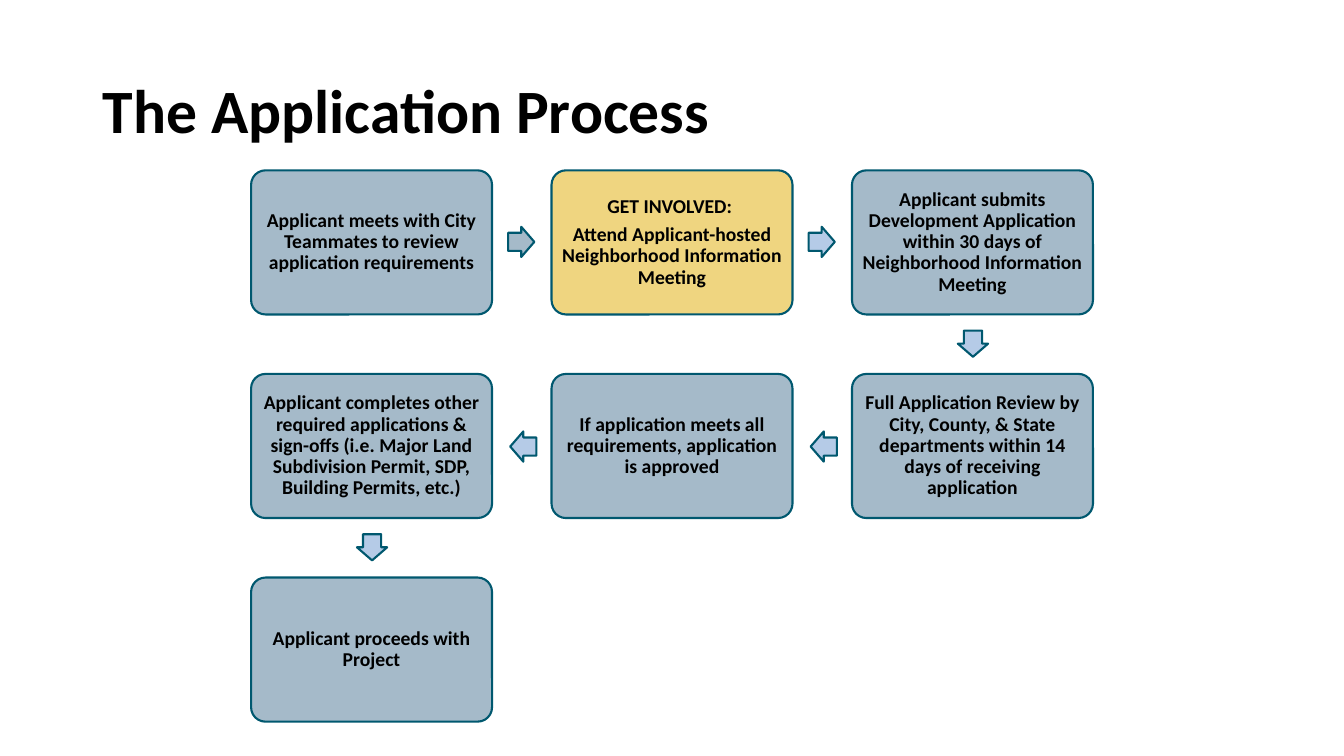
from pptx import Presentation
from pptx.dml.color import RGBColor
from pptx.enum.shapes import MSO_SHAPE
from pptx.enum.text import MSO_ANCHOR, PP_ALIGN
from pptx.util import Inches, Pt

COLORS = {"step": "A5BAC9", "highlight": "EFD580", "arrow": "B5CBE7",
          "outline": "00586F", "text": "000000"}

BOX_W, BOX_H = 2.39, 1.43
ARROW_W, ARROW_H = 0.26, 0.3
LEFT, TOP = 2.49, 1.69
COL_STEP, ROW_STEP = 2.98, 2.02

# Arrow offset from its step's corner, and rotation
ARROWS = {"right": (2.55, 0.56, 0),
          "down": (1.07, 1.57, 90),
          "left": (-0.41, 0.57, 180)}

# Column, row, box colour, paragraphs, direction of next step, arrow colour
STEPS = [
    (0, 0, "step", ["Applicant meets with City Teammates to review application requirements"],
     "right", "step"),
    (1, 0, "highlight", ["GET INVOLVED: ",
                         "Attend Applicant-hosted Neighborhood Information Meeting"],
     "right", "arrow"),
    (2, 0, "step", ["Applicant submits Development Application within 30 days of "
                    "Neighborhood Information Meeting"], "down", "arrow"),
    (2, 1, "step", ["Full Application Review by City, County, & State departments "
                    "within 14 days of receiving application"], "left", "arrow"),
    (1, 1, "step", ["If application meets all requirements, application is approved"],
     "left", "arrow"),
    (0, 1, "step", ["Applicant completes other required applications & sign-offs "
                    "(i.e. Major Land Subdivision Permit, SDP, Building Permits, etc.)"],
     "down", "arrow"),
    (0, 2, "step", ["Applicant proceeds with Project"], None, None),
]


def add_block(shape_type, x, y, w, h, color):
    sp = s.shapes.add_shape(shape_type, Inches(x), Inches(y), Inches(w), Inches(h))
    sp.shadow.inherit = False
    sp.fill.solid()
    sp.fill.fore_color.rgb = RGBColor.from_string(COLORS[color])
    sp.line.color.rgb = RGBColor.from_string(COLORS["outline"])
    sp.line.width = Pt(1.5)
    return sp


def format_text(p, size):
    p.line_spacing = 0.9
    for r in p.runs:
        r.font.name = "Calibri"
        r.font.size = Pt(size)
        r.font.bold = True
        r.font.color.rgb = RGBColor.from_string(COLORS["text"])


prs = Presentation()
prs.slide_width = Inches(13.33)
prs.slide_height = Inches(7.5)
s = prs.slides.add_slide(prs.slide_layouts[5])

# Title
title = s.shapes.title
title.left, title.top = Inches(0.92), Inches(0.4)
title.width, title.height = Inches(11.5), Inches(1.45)
tf = title.text_frame
tf.text = "The Application Process"
tf.vertical_anchor = MSO_ANCHOR.MIDDLE
tf.paragraphs[0].alignment = PP_ALIGN.LEFT
format_text(tf.paragraphs[0], 44)

# Process steps, each followed by an arrow to the next
for col, row, color, lines, direction, arrow_color in STEPS:
    x, y = LEFT + col * COL_STEP, TOP + row * ROW_STEP
    box = add_block(MSO_SHAPE.ROUNDED_RECTANGLE, x, y, BOX_W, BOX_H, color)
    box.adjustments[0] = 0.1
    tf = box.text_frame
    tf.word_wrap = True
    tf.vertical_anchor = MSO_ANCHOR.MIDDLE
    tf.margin_left = tf.margin_right = Inches(0.06)
    tf.margin_top = tf.margin_bottom = Inches(0.06)
    tf.text = "\n".join(lines)
    for p in tf.paragraphs:
        p.alignment = PP_ALIGN.CENTER
        p.space_after = Pt(5)
        format_text(p, 14)

    if direction:
        dx, dy, rotation = ARROWS[direction]
        arrow = add_block(MSO_SHAPE.RIGHT_ARROW, x + dx, y + dy,
                          ARROW_W, ARROW_H, arrow_color)
        arrow.adjustments[0] = 0.6
        arrow.adjustments[1] = 0.5
        arrow.rotation = rotation

prs.save("out.pptx")
